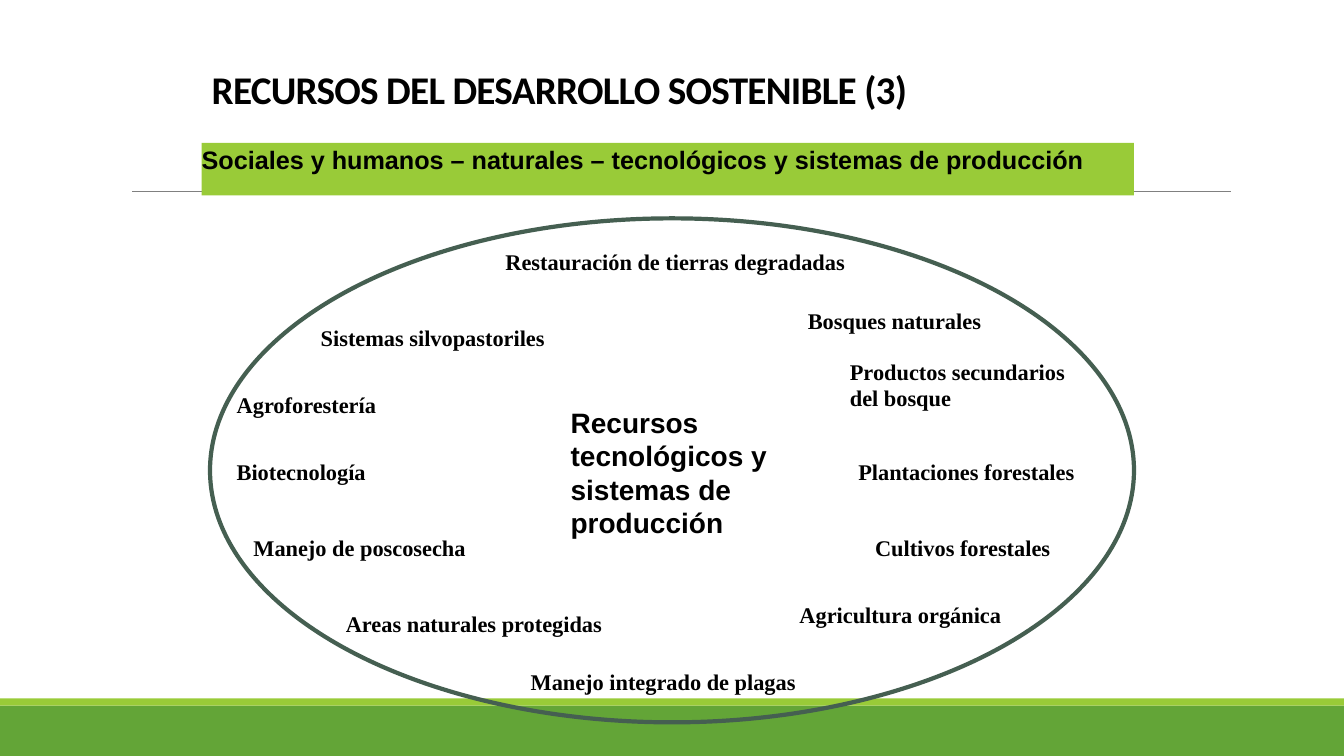
import pptx
import pptx.util
import pptx.dml.color
import pptx.enum.shapes
import pptx.enum.text
import pptx.oxml

PX = 9525  # EMU per px, 96 px to the inch
SHAPE = pptx.enum.shapes.MSO_SHAPE
ANCHOR = pptx.enum.text.MSO_ANCHOR
AUTO = pptx.enum.text.MSO_AUTO_SIZE


def px(n):
    return pptx.util.Emu(n * PX)


def rgb(value):
    return pptx.dml.color.RGBColor.from_string(value)


class Deck:
    GREEN, LIME, DARK = "63A537", "99CB38", "455F51"
    GREY, INK = "808080", "000000"

    def __init__(self):
        self.prs = pptx.Presentation()
        self.prs.slide_width, self.prs.slide_height = px(1280), px(720)
        self.s = self.prs.slides.add_slide(self.prs.slide_layouts[5])

    def set_text(self, tf, text, font, size, spacing=None):
        tf.text = text
        tf.word_wrap = True
        p = tf.paragraphs[0]
        p.alignment = pptx.enum.text.PP_ALIGN.LEFT
        p.line_spacing = spacing
        r = p.runs[0]
        r.font.name, r.font.size, r.font.bold = font, pptx.util.Pt(size), True
        r.font.color.rgb = rgb(self.INK)
        return r

    def title(self, text, x, y, w, h):
        sp = self.s.shapes.title
        sp.left, sp.top, sp.width, sp.height = map(px, (x, y, w, h))
        tf = sp.text_frame
        r = self.set_text(tf, text, "Calibri", 28, 0.85)
        r._r.get_or_add_rPr().set("spc", "-50")
        tf.auto_size = AUTO.NONE
        tf.vertical_anchor = ANCHOR.BOTTOM

    def shape(self, kind, x, y, w, h, fill=None, line=None, width=3):
        sp = self.s.shapes.add_shape(kind, *map(px, (x, y, w, h)))
        sp.shadow.inherit = False
        if fill:
            sp.fill.solid()
            sp.fill.fore_color.rgb = rgb(fill)
        else:
            sp.fill.background()
        if line:
            sp.line.color.rgb = rgb(line)
            sp.line.width = pptx.util.Pt(width)
        else:
            sp.line.fill.background()
        return sp

    def banner(self, text, x, y, w, h):
        tf = self.shape(SHAPE.RECTANGLE, x, y, w, h, self.LIME).text_frame
        tf.margin_left = tf.margin_right = 0
        tf.vertical_anchor = ANCHOR.TOP
        self.set_text(tf, text, "Arial", 18, 0.9)

    def rule(self, x1, x2, y):
        c = self.s.shapes.add_connector(
            pptx.enum.shapes.MSO_CONNECTOR.STRAIGHT, px(x1), px(y), px(x2), px(y))
        c.line.color.rgb = rgb(self.GREY)
        c.line.width = pptx.util.Pt(0.5)
        c._element.spPr.append(pptx.oxml.parse_xml(
            '<a:effectLst xmlns:a="http://schemas.openxmlformats.org/drawingml/2006/main"/>'))

    def label(self, text, x, y, w, h=36, font="Times New Roman", size=16):
        tf = self.s.shapes.add_textbox(*map(px, (x, y, w, h))).text_frame
        self.set_text(tf, text, font, size)
        tf.auto_size = AUTO.SHAPE_TO_FIT_TEXT


# Labels around the ellipse: text, left, top, width
LABELS = [
    ("Biotecnología", 216, 432, 192),
    ("Agricultura orgánica", 752, 568, 232),
    ("Cultivos forestales", 824, 504, 208),
    ("Manejo integrado de plagas", 496, 632, 312),
    ("Plantaciones forestales", 808, 432, 256),
    ("Productos secundarios del bosque", 800, 336, 240, 61),
    ("Bosques naturales", 760, 288, 200),
    ("Restauración de tierras degradadas", 472, 232, 376),
    ("Sistemas silvopastoriles", 296, 304, 256),
    ("Agroforestería", 216, 368, 216),
    ("Areas naturales protegidas", 320, 576, 280),
    ("Manejo de poscosecha", 232, 504, 240),
]


def main():
    d = Deck()

    # Footer bands and header rule
    d.shape(SHAPE.RECTANGLE, 0, 672, 1280, 48, d.GREEN)
    d.shape(SHAPE.RECTANGLE, 0, 665, 1280, 7, d.LIME)
    d.rule(126, 1172, 182)

    # Title and subtitle banner
    d.title("RECURSOS DEL DESARROLLO SOSTENIBLE (3)", 192, 24, 896, 88)
    d.banner("Sociales y humanos – naturales – tecnológicos y sistemas de producción",
             192, 136, 888, 50)

    # Ellipse with its central topic
    d.shape(SHAPE.OVAL, 200, 208, 880, 480, line=d.DARK)
    d.label("Recursos tecnológicos y sistemas de producción",
            534, 381, 208, 137, "Arial", 20)

    # Resources
    for item in LABELS:
        d.label(*item)

    d.prs.save("out.pptx")


if __name__ == "__main__":
    main()
